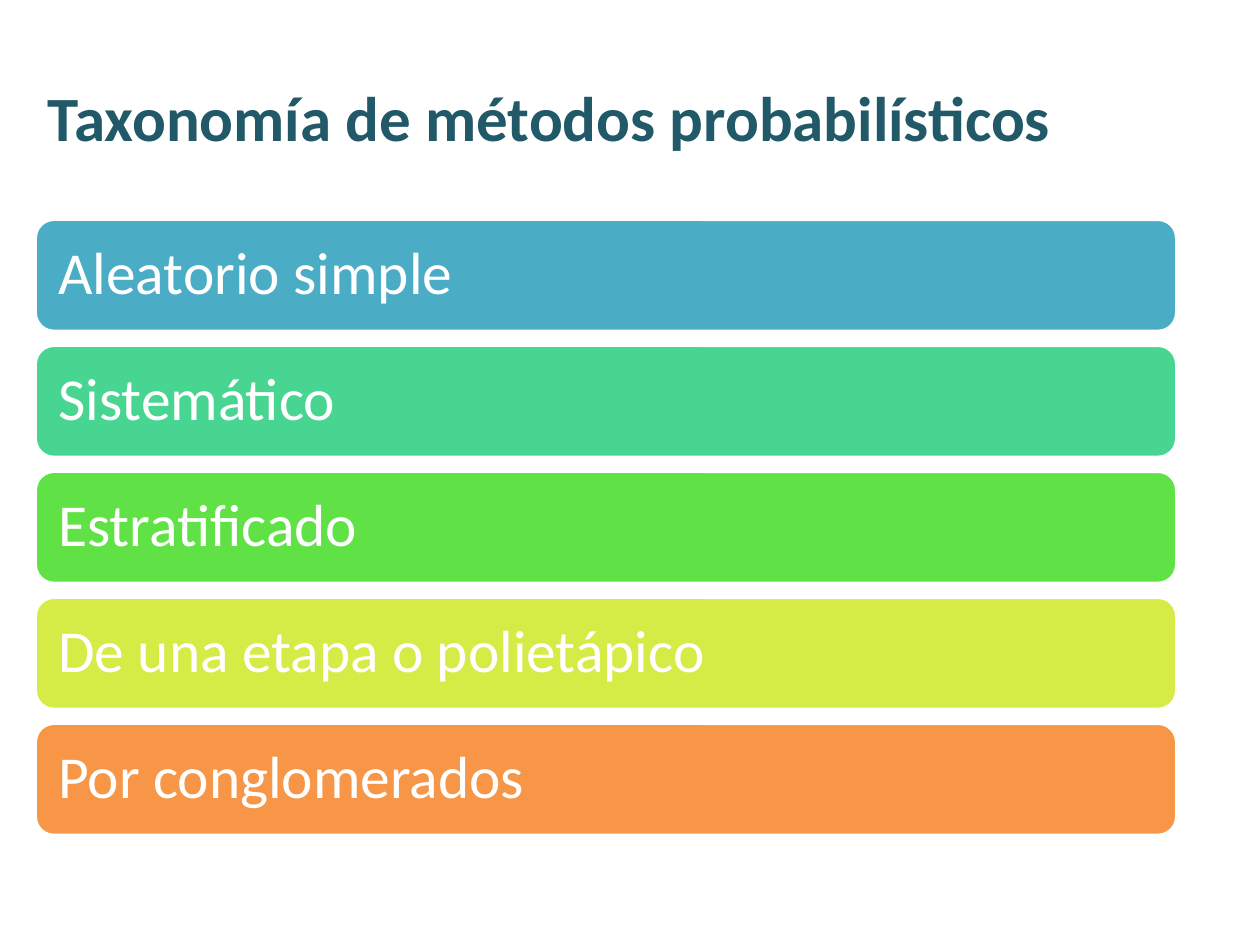
import pptx
import pptx.dml.color
import pptx.enum.shapes
import pptx.enum.text
import pptx.util

Inches = pptx.util.Inches
Pt = pptx.util.Pt

LEFT = 0.28
BAR_TOP, BAR_WIDTH, BAR_HEIGHT, BAR_STEP = 1.74, 9.06, 0.89, 1.0
BAR_INSET = 0.14

METHODS = [
    ("Aleatorio simple", "4BACC6"),
    ("Sistemático", "48D491"),
    ("Estratificado", "60E146"),
    ("De una etapa o polietápico", "D5EC46"),
    ("Por conglomerados", "F79646"),
]

TITLE_FONT = {"name": "Calibri", "size": Pt(36), "bold": True}
BAR_FONT = {"name": "Calibri", "size": Pt(34), "bold": False}


def rgb(value):
    return pptx.dml.color.RGBColor.from_string(value)


def set_attrs(obj, values):
    for name, value in values.items():
        setattr(obj, name, value)


def write_text(sp, text, font, color):
    """Put one left-aligned, vertically centred line of text in a shape."""
    tf = sp.text_frame
    set_attrs(tf, {"word_wrap": True,
                   "vertical_anchor": pptx.enum.text.MSO_ANCHOR.MIDDLE})
    p = tf.paragraphs[0]
    p.alignment = pptx.enum.text.PP_ALIGN.LEFT
    r = p.add_run()
    r.text = text
    set_attrs(r.font, font)
    r.font.color.rgb = rgb(color)
    return tf


def add_title(slide, text):
    sp = slide.shapes.title
    set_attrs(sp, {"left": Inches(LEFT), "top": Inches(0.3),
                   "width": Inches(8.98), "height": Inches(1.25)})
    write_text(sp, text, TITLE_FONT, "215968")


def add_bar(slide, top, text, fill):
    sp = slide.shapes.add_shape(
        pptx.enum.shapes.MSO_SHAPE.ROUNDED_RECTANGLE,
        Inches(LEFT), Inches(top), Inches(BAR_WIDTH), Inches(BAR_HEIGHT))
    sp.shadow.inherit = False
    sp.fill.solid()
    sp.fill.fore_color.rgb = rgb(fill)
    sp.line.color.rgb = rgb("FFFFFF")
    sp.line.width = Pt(2)
    tf = write_text(sp, text, BAR_FONT, "FFFFFF")
    sides = ("left", "top", "right", "bottom")
    set_attrs(tf, {f"margin_{side}": Inches(BAR_INSET) for side in sides})
    tf.paragraphs[0].line_spacing = 0.9


def main():
    prs = pptx.Presentation()
    set_attrs(prs, {"slide_width": Inches(10), "slide_height": Inches(7.5)})
    slide = prs.slides.add_slide(prs.slide_layouts.get_by_name("Title Only"))
    add_title(slide, "Taxonomía de métodos probabilísticos")
    for i, (text, fill) in enumerate(METHODS):
        add_bar(slide, BAR_TOP + i * BAR_STEP, text, fill)
    prs.save("out.pptx")


if __name__ == "__main__":
    main()
